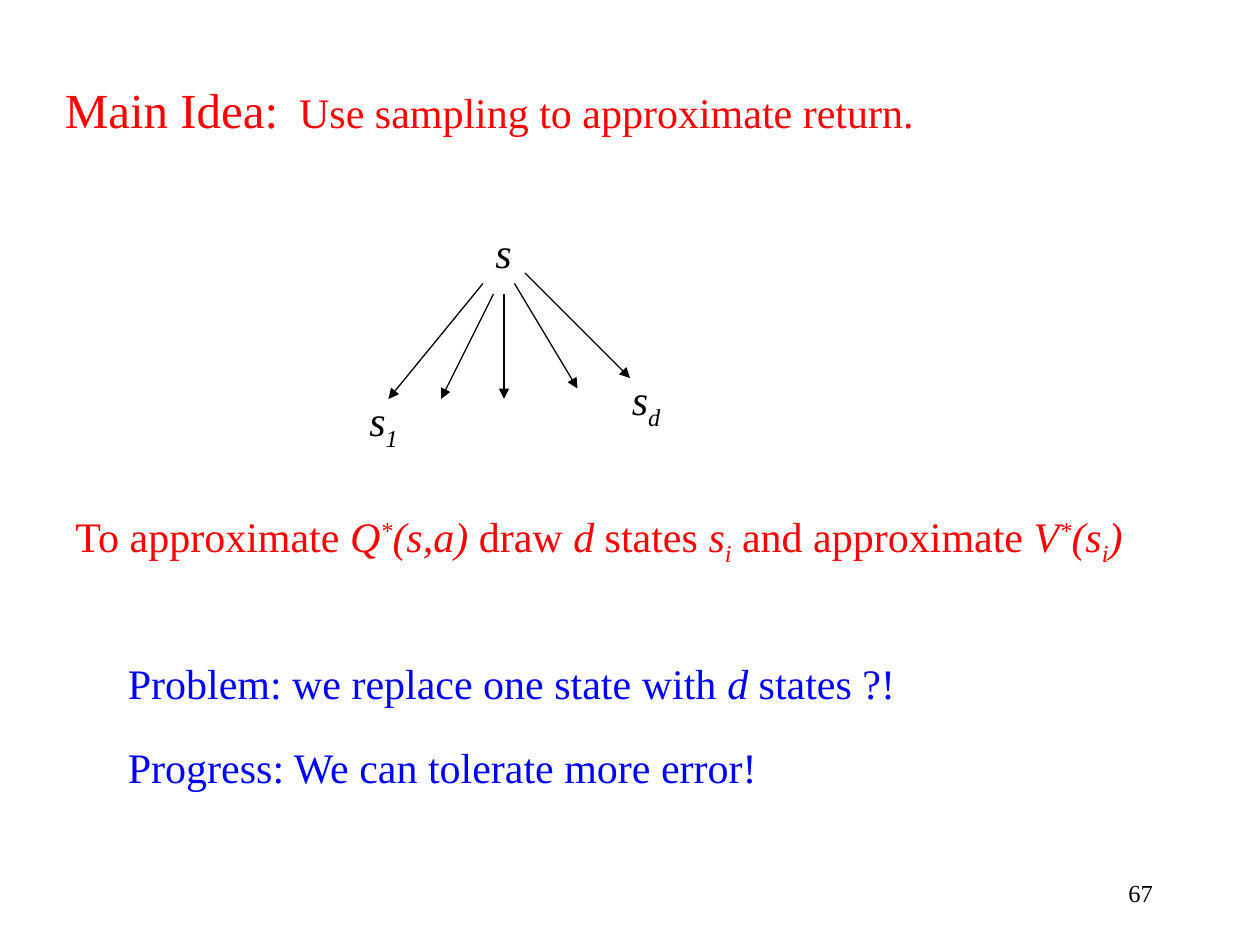
from lxml import etree
from pptx import Presentation
from pptx.dml.color import RGBColor
from pptx.enum.shapes import MSO_CONNECTOR
from pptx.enum.text import MSO_ANCHOR, PP_ALIGN
from pptx.oxml.ns import qn
from pptx.util import Inches, Pt

BLACK = RGBColor(0, 0, 0)
RED = RGBColor(255, 0, 0)
BLUE = RGBColor(0, 0, 255)
LINE = MSO_CONNECTOR.STRAIGHT
MIDDLE, RIGHT = MSO_ANCHOR.MIDDLE, PP_ALIGN.RIGHT

FONT = "Times New Roman"
CELL = Inches(10) // 120  # the slide is 120 columns by 90 rows
SHIFT = {"^": "30000", "_": "-25000"}

GOAL = [
    ("To approximate ", ""), ("Q", "i"), ("*", "i^"), ("(s,a)", "i"),
    (" draw ", ""), ("d", "i"), (" states ", ""), ("s", "i"), ("i", "i_"),
    (" and approximate ", ""), ("V", "i"), ("*", "i^"), ("(s", "i"),
    ("i", "i_"), (")", "i"),
]
LABELS = [
    (46, 21, 4, [("s", "i")]),
    (34, 37, 6, [("s", "i"), ("1", "i_")]),
    (59, 35, 7, [("s", "i"), ("d", "i_")]),
]
ARROWS = [
    (46, 27, 37, 38), (48, 28, 48, 38), (47, 28, 42, 38),
    (49, 27, 55, 37), (50, 26, 60, 36),
]


def add_runs(para, runs, color, size):
    """Marks: i is italic, ^ is raised, _ is lowered."""
    for text, marks in runs:
        run = para.add_run()
        run.text = text
        form = {"name": FONT, "size": Pt(size), "italic": "i" in marks}
        for key, value in form.items():
            setattr(run.font, key, value)
        run.font.color.rgb = color
        for mark in marks:
            if mark in SHIFT:
                run._r.get_or_add_rPr().set("baseline", SHIFT[mark])


def add_text(slide, col, row, cols, runs, color=BLACK, size=24, rows=6):
    box = slide.shapes.add_textbox(
        col * CELL, row * CELL, cols * CELL, rows * CELL)
    frame = box.text_frame
    frame.word_wrap = True
    para = frame.paragraphs[0]
    add_runs(para, runs, color, size)
    return frame, para


def space_half(para):
    """Put half a line of space before the paragraph."""
    before = etree.SubElement(para._p.get_or_add_pPr(), qn("a:spcBef"))
    etree.SubElement(before, qn("a:spcPct"), val="50000")


def add_body(slide, *args, **form):
    space_half(add_text(slide, *args, **form)[1])


def add_number(slide, text):
    frame, para = add_text(slide, 86, 82, 25, [(text, "")], size=14)
    frame.word_wrap = False
    frame.vertical_anchor = MIDDLE
    para.alignment = RIGHT


def add_arrow(slide, *ends):
    arrow = slide.shapes.add_connector(LINE, *(end * CELL for end in ends))
    arrow.line.color.rgb = BLACK
    arrow.line.width = Pt(0.75)
    etree.SubElement(arrow.line._get_or_add_ln(), qn("a:tailEnd"),
                     type="triangle")
    etree.SubElement(arrow._element.spPr, qn("a:effectLst"))


def main():
    deck = Presentation()
    deck.slide_width, deck.slide_height = 120 * CELL, 90 * CELL
    slide = deck.slides.add_slide(deck.slide_layouts[6])

    add_number(slide, "67")
    frame, para = add_text(slide, 5, 7, 98, [("Main Idea:", "")], RED, 28, 7)
    add_runs(para, [("  Use sampling to approximate return.", "")], RED, 24)
    space_half(para)

    for ends in ARROWS:
        add_arrow(slide, *ends)
    for label in LABELS:
        add_body(slide, *label)

    add_body(slide, 6, 48, 106, GOAL, RED)
    add_body(slide, 11, 62, 77, [
        ("Problem: we replace one state with ", ""), ("d", "i"),
        (" states ?!", "")], BLUE)
    add_body(slide, 11, 70, 80, [
        ("Progress: We can tolerate more error!", "")], BLUE)
    deck.save("out.pptx")


if __name__ == "__main__":
    main()
